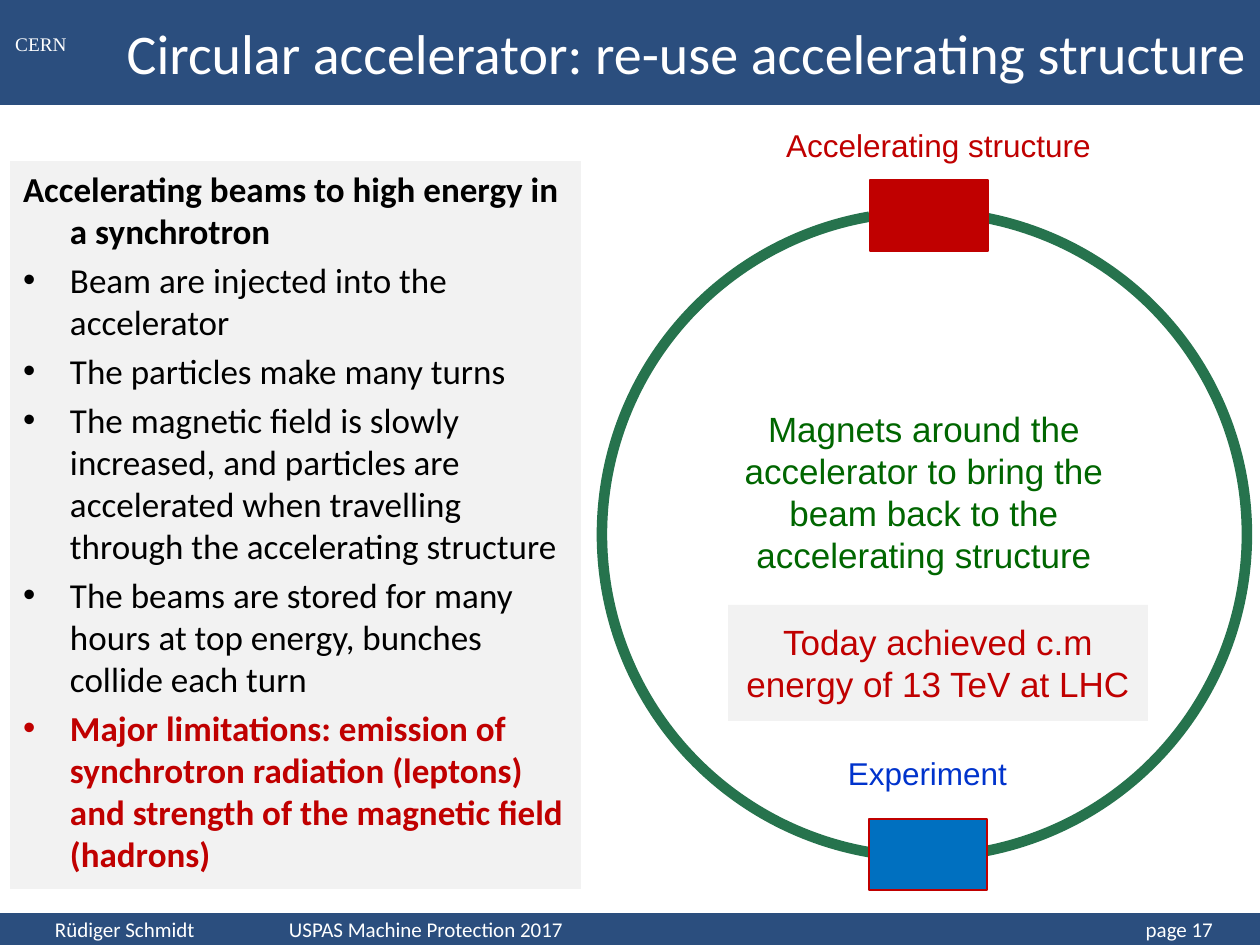
from lxml import etree
from pptx import Presentation
from pptx import util as u
from pptx.dml.color import RGBColor
from pptx.enum import shapes, text
from pptx.oxml.ns import qn

EMU_PER_PX = 914400 / 126
COLORS = {
    "bar": "2B4E7E", "white": "FFFFFF", "black": "000000", "panel": "F2F2F2",
    "red": "C00000", "blue": "0070C0", "ring": "26734D",
    "magnets": "006600", "experiment": "0033CC",
}
LEFT, CENTER, RIGHT = text.PP_ALIGN.LEFT, text.PP_ALIGN.CENTER, text.PP_ALIGN.RIGHT
TOP, MIDDLE = text.MSO_ANCHOR.TOP, text.MSO_ANCHOR.MIDDLE
RECTANGLE, ARC = shapes.MSO_SHAPE.RECTANGLE, shapes.MSO_SHAPE.ARC

HEADING = "Accelerating beams to high energy in a synchrotron"
BULLETS = [
    "Beam are injected into the accelerator",
    "The particles make many turns",
    "The magnetic field is slowly increased, and particles are accelerated "
    "when travelling through the accelerating structure",
    "The beams are stored for many hours at top energy, bunches collide each turn",
]
LIMITATION = ("Major limitations: emission of synchrotron radiation (leptons) "
              "and strength of the magnetic field (hadrons)")


def px(value):
    return u.Emu(round(value * EMU_PER_PX))


def rgb(name):
    return RGBColor.from_string(COLORS[name])


def place(shape, box):
    shape.left, shape.top, shape.width, shape.height = map(px, box)


def fill_solid(shape, color):
    shape.fill.solid()
    shape.fill.fore_color.rgb = rgb(color)


def format_frame(shape, anchor):
    frame = shape.text_frame
    frame.word_wrap = True
    frame.auto_size = text.MSO_AUTO_SIZE.NONE
    frame.vertical_anchor = anchor
    frame.margin_left = frame.margin_right = px(13)
    frame.margin_top = frame.margin_bottom = px(6)
    return frame


def format_paragraph(paragraph, size, color, name, align=LEFT, bold=False):
    paragraph.alignment = align
    font = paragraph.font
    font.size, font.name, font.bold = u.Pt(size), name, bold
    font.color.rgb = rgb(color)


def add_block(slide, box, fill=None, line=None, weight=0.75, kind=RECTANGLE):
    shape = slide.shapes.add_shape(kind, *map(px, box))
    shape.shadow.inherit = False
    if fill:
        fill_solid(shape, fill)
    else:
        shape.fill.background()
    if line:
        shape.line.color.rgb = rgb(line)
        shape.line.width = u.Pt(weight)
    else:
        shape.line.fill.background()
    return shape


def write(shape, words, size, color, name="Arial", align=CENTER, anchor=MIDDLE):
    frame = format_frame(shape, anchor)
    frame.text = words
    format_paragraph(frame.paragraphs[0], size, color, name, align)
    return frame


def add_label(slide, box, *args, **options):
    return write(slide.shapes.add_textbox(*map(px, box)), *args, **options)


def set_hanging_indent(paragraph, indent, bullet):
    properties = paragraph._p.get_or_add_pPr()
    properties.set("marL", str(px(indent)))
    properties.set("indent", str(px(-indent)))
    if bullet:
        etree.SubElement(properties, qn("a:buFont")).set("typeface", "Arial")
        etree.SubElement(properties, qn("a:buChar")).set("char", "•")
    else:
        etree.SubElement(properties, qn("a:buNone"))


def add_tab_stops(paragraph, stops):
    tabs = etree.SubElement(paragraph._p.get_or_add_pPr(), qn("a:tabLst"))
    for position, align in stops:
        tab = etree.SubElement(tabs, qn("a:tab"))
        tab.set("pos", str(px(position)))
        tab.set("algn", align)


def add_header(slide, box):
    left, top, width, height = box
    add_block(slide, box, "bar")
    add_label(slide, (left - 1, top + 25, 84, 37), "CERN", 11, "white",
              "Times New Roman")
    title = slide.shapes.title
    place(title, (left + 105, top, width - 105, height))
    write(title, "Circular accelerator: re-use accelerating structure", 32,
          "white", "Calibri", RIGHT)


def add_footer(slide, box):
    left, top, width, height = box
    add_block(slide, box, "bar")
    label = slide.shapes.add_textbox(*map(px, box))
    frame = format_frame(label, MIDDLE)
    frame.margin_left = px(55)
    frame.margin_top = frame.margin_bottom = 0
    paragraph = frame.paragraphs[0]
    paragraph.text = "Rüdiger Schmidt\tUSPAS Machine Protection 2017\tpage 17"
    add_tab_stops(paragraph, [(234, "l"), (1158, "r")])
    format_paragraph(paragraph, 12, "white", "Calibri")


def add_list(slide, box):
    body = slide.placeholders[1]
    place(body, box)
    fill_solid(body, "panel")
    frame = format_frame(body, TOP)
    items = [HEADING, *BULLETS, LIMITATION]
    frame.text = "\n".join(items)
    for item, paragraph in zip(items, frame.paragraphs):
        is_heading = item == HEADING
        paragraph.space_before = u.Pt(0 if is_heading else 4)
        set_hanging_indent(paragraph, 47, bullet=not is_heading)
        format_paragraph(paragraph, 20, "red" if item == LIMITATION else "black",
                         "Calibri", bold=item in (HEADING, LIMITATION))


def add_ring(slide, box):
    """Draw the accelerator ring in its square box, with its stations and labels."""
    left, top, width, height = box
    add_label(slide, (left + 158, top - 94, 357, 53), "Accelerating structure",
              18, "red")
    ring = add_block(slide, box, line="ring", weight=6, kind=ARC)
    # The opening of the arc lies behind the accelerating structure.
    ring.adjustments[0], ring.adjustments[1] = 168.31, 156.11
    station_width, station_height = 118, 71
    station_left = left + 267
    add_block(slide, (station_left + 1, top - 32, station_width, station_height),
              "red", "red")
    add_label(slide, (left + 112, top + 204, 420, 151),
              "Magnets around the accelerator to bring the beam back to the "
              "accelerating structure", 20, "magnets")
    add_block(slide, (station_left, top + height - 38, station_width, station_height),
              "blue", "red")
    add_label(slide, (left + 231, top + 534, 189, 53), "Experiment", 18, "experiment")
    energy = add_block(slide, (left + 126, top + 393, 420, 116), "panel")
    write(energy, "Today achieved c.m energy of 13 TeV at LHC", 20, "red")


def main():
    presentation = Presentation()
    presentation.slide_width, presentation.slide_height = px(1260), px(945)
    slide = presentation.slides.add_slide(presentation.slide_layouts[1])
    add_header(slide, (0, 0, 1260, 105))
    # Bring the title in front of the header bar.
    slide.shapes._spTree.append(slide.shapes.title._element)
    add_footer(slide, (0, 913, 1260, 32))
    add_list(slide, (10, 161, 571, 728))
    add_ring(slide, (602, 212, 645, 645))
    presentation.save("out.pptx")


if __name__ == "__main__":
    main()
